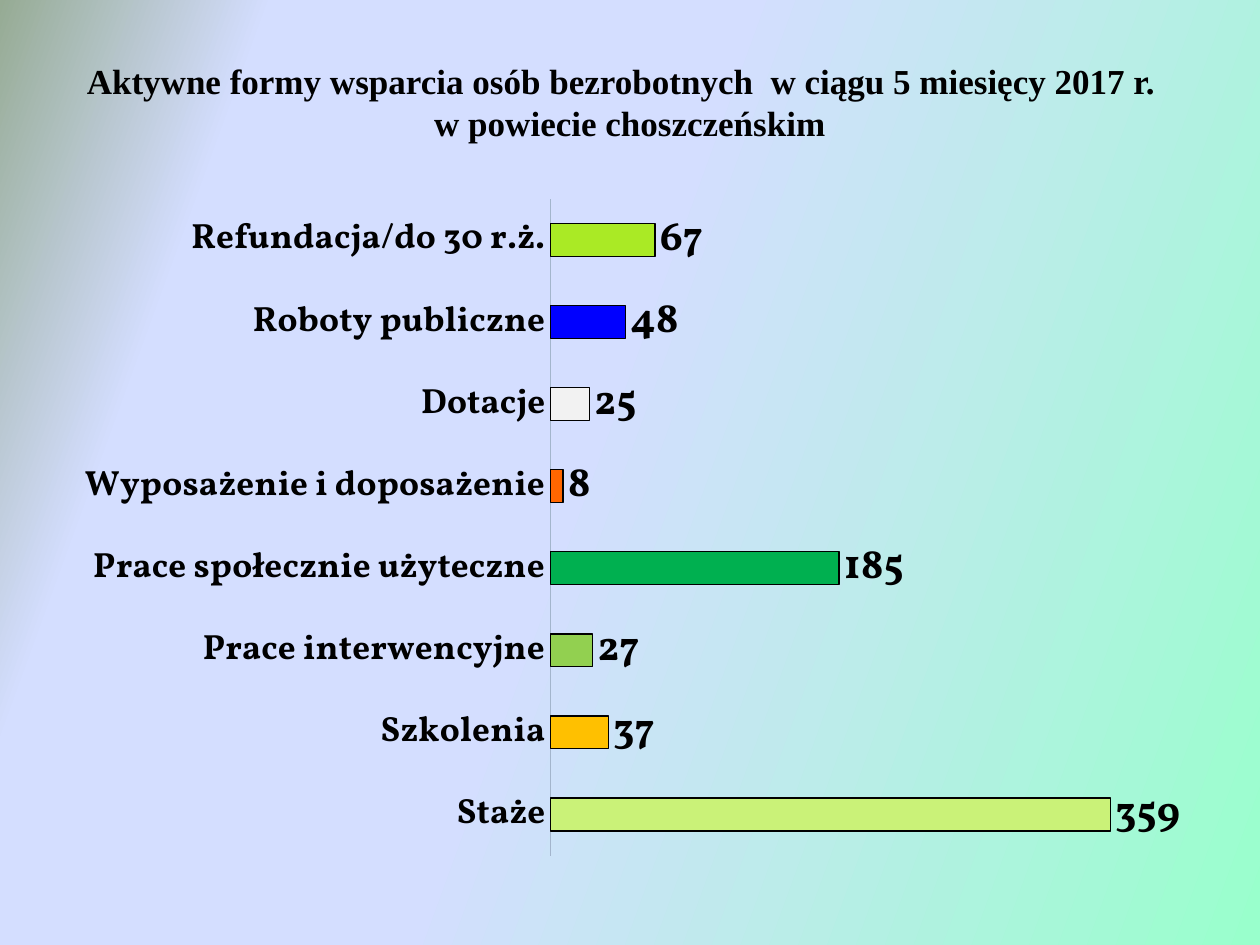
from lxml import etree
from pptx import Presentation
from pptx import util as u
from pptx.chart import data as chart_data
from pptx.dml import color
from pptx.enum import chart as ch, text
from pptx.oxml import ns

Pt = u.Pt
THEME = {
    "ink": "000000", "axis": "A3B5CC", "series": "94C600",
    "background": [(0, "99FFCC"), (54, "D4DEFF"), (83, "D4DEFF"), (100, "96AB94")],
    "title_font": "Times New Roman", "chart_font": "Vollkorn",
    "title_size": 20, "chart_size": 18, "category_size": 20, "value_size": 24,
}
SUPPORT_FORMS = [
    ("Staże", 359, "CAF278"),
    ("Szkolenia", 37, "FFC000"),
    ("Prace interwencyjne", 27, "92D050"),
    ("Prace społecznie użyteczne", 185, "00B050"),
    ("Wyposażenie i doposażenie", 8, "FF6600"),
    ("Dotacje", 25, "F2F2F2"),
    ("Roboty publiczne", 48, "0000FF"),
    ("Refundacja/do 30 r.ż.", 67, "AAEA25"),
]


def rgb(value):
    return color.RGBColor.from_string(value)


def style_font(font, size, name, bold):
    for attribute, value in {"size": Pt(size), "name": name, "bold": bold}.items():
        setattr(font, attribute, value)
    font.color.rgb = rgb(THEME["ink"])


deck = Presentation()
deck.slide_width, deck.slide_height = Pt(720), Pt(540)
slide = deck.slides.add_slide(deck.slide_layouts[5])

# Background gradient, running from bottom right to top left
backdrop = slide.background.fill
backdrop.gradient()
backdrop.gradient_angle = 160
stops = next(slide.element.iter(ns.qn("a:gsLst")))
for old_stop in list(stops):
    stops.remove(old_stop)
for percent, shade in THEME["background"]:
    stop = etree.SubElement(stops, ns.qn("a:gs"), pos=str(percent * 1000))
    etree.SubElement(stop, ns.qn("a:srgbClr"), val=shade)

# Title
title = slide.shapes.title
for attribute, value in {"left": 36, "top": 21.6, "width": 648, "height": 72.7}.items():
    setattr(title, attribute, Pt(value))
heading = title.text_frame
heading.text = ("Aktywne formy wsparcia osób bezrobotnych  w ciągu 5 miesięcy 2017 r.  \v"
                "w powiecie choszczeńskim")
heading.vertical_anchor = text.MSO_ANCHOR.MIDDLE
heading.paragraphs[0].alignment = text.PP_ALIGN.CENTER
for run in heading.paragraphs[0].runs:
    style_font(run.font, THEME["title_size"], THEME["title_font"], True)

# Bar chart of support forms
figures = chart_data.CategoryChartData()
figures.categories = [name for name, _, _ in SUPPORT_FORMS]
figures.add_series("Series 1", [count for _, count, _ in SUPPORT_FORMS])
chart = slide.shapes.add_chart(ch.XL_CHART_TYPE.BAR_CLUSTERED, Pt(36), Pt(105.8),
                               Pt(648), Pt(391), figures).chart
for attribute, value in {"has_legend": False, "has_title": False}.items():
    setattr(chart, attribute, value)
style_font(chart.font, THEME["chart_size"], THEME["chart_font"], False)

# Axes
forms_axis, count_axis = chart.category_axis, chart.value_axis
for attribute, value in {"major_tick_mark": ch.XL_TICK_MARK.NONE,
                         "minor_tick_mark": ch.XL_TICK_MARK.NONE}.items():
    setattr(forms_axis, attribute, value)
forms_axis.format.line.color.rgb = rgb(THEME["axis"])
forms_axis.format.line.width = Pt(0.75)
style_font(forms_axis.tick_labels.font, THEME["category_size"], THEME["chart_font"], True)
for attribute, value in {"minimum_scale": 0, "maximum_scale": 400,
                         "has_major_gridlines": False, "visible": False}.items():
    setattr(count_axis, attribute, value)

# Bars, one colour for each form
plot = chart.plots[0]
plot.gap_width = 150
plot.vary_by_categories = False
bars = plot.series[0]
bars.invert_if_negative = False
bar_formats = [(bars.format, THEME["series"])]
bar_formats += [(bars.points[i].format, shade) for i, (_, _, shade) in enumerate(SUPPORT_FORMS)]
for bar_format, shade in bar_formats:
    bar_format.fill.solid()
    bar_format.fill.fore_color.rgb = rgb(shade)
    bar_format.line.color.rgb = rgb(THEME["ink"])
    bar_format.line.width = Pt(0.75)

# Values at the bar ends
counts = bars.data_labels
for attribute, value in {"show_value": True,
                         "position": ch.XL_LABEL_POSITION.OUTSIDE_END}.items():
    setattr(counts, attribute, value)
style_font(counts.font, THEME["value_size"], THEME["chart_font"], True)

# Plot area inside the chart frame, as fractions of it
plot_area = next(chart.element.iter(ns.qn("c:plotArea")))
for old_layout in plot_area.findall(ns.qn("c:layout")):
    plot_area.remove(old_layout)
layout = etree.Element(ns.qn("c:layout"))
plot_area.insert(0, layout)
manual = etree.SubElement(layout, ns.qn("c:manualLayout"))
for tag, value in {"layoutTarget": "inner", "xMode": "edge", "yMode": "edge",
                   "x": 0.43, "y": 0.02, "w": 0.55, "h": 0.96}.items():
    etree.SubElement(manual, ns.qn("c:" + tag), val=str(value))

deck.save("out.pptx")
